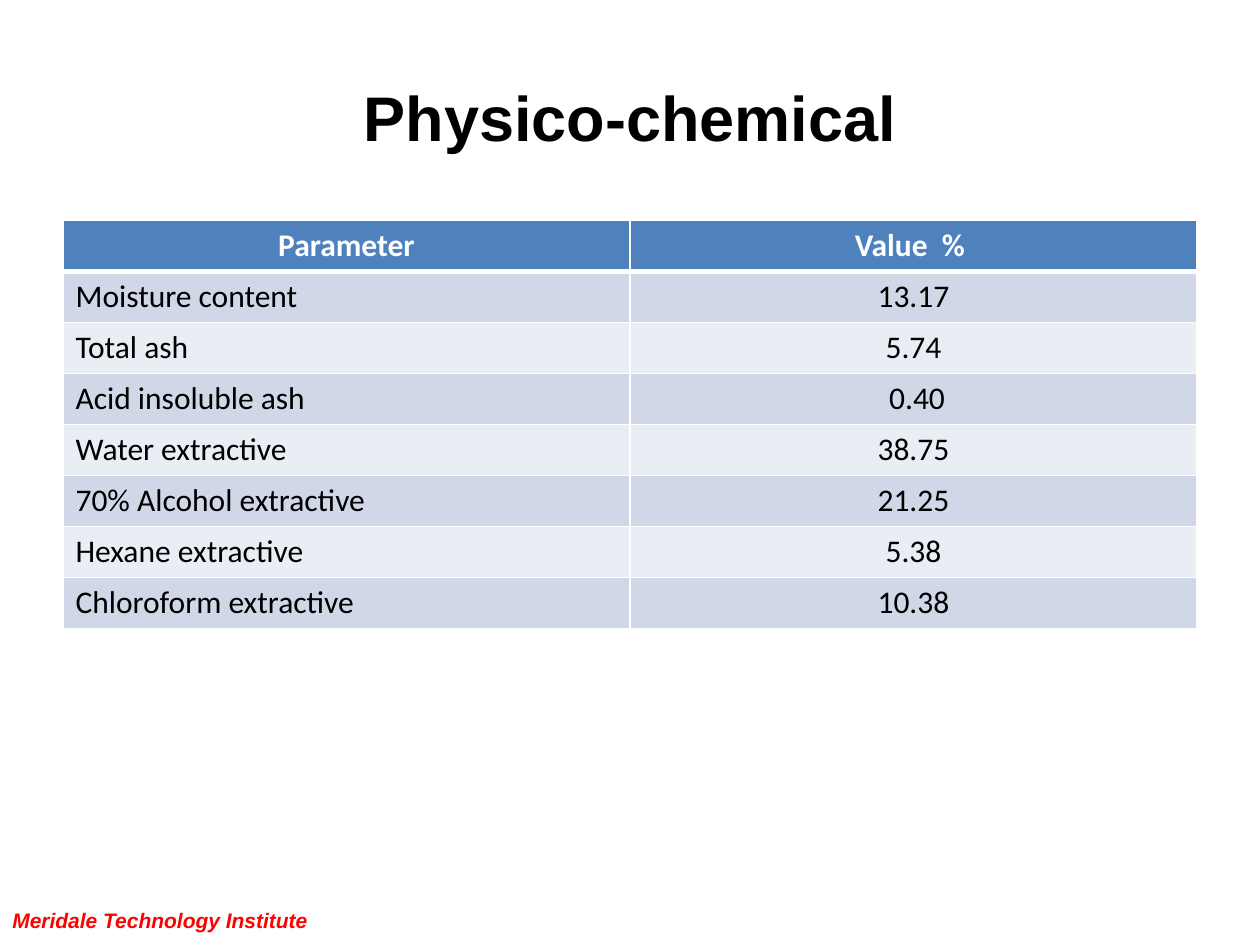
from lxml import etree
from pptx import Presentation
from pptx.dml.color import RGBColor
from pptx.enum.text import MSO_ANCHOR, PP_ALIGN
from pptx.oxml.ns import qn
from pptx.util import Inches, Pt

LEFT, CENTER = PP_ALIGN.LEFT, PP_ALIGN.CENTER
MIDDLE = MSO_ANCHOR.MIDDLE

COLORS = {
    "black": "000000",
    "white": "FFFFFF",
    "header": "4F81BD",
    "odd_row": "D0D8E8",
    "even_row": "E9EDF4",
    "footer": "FF0000",
}

ROWS = [
    ("Parameter", "Value  % "),
    ("Moisture content", "13.17"),
    ("Total ash", "5.74"),
    ("Acid insoluble ash", " 0.40"),
    ("Water extractive", "38.75"),
    ("70% Alcohol extractive", "21.25"),
    ("Hexane extractive", "5.38"),
    ("Chloroform extractive", "10.38"),
]


def write_text(text_frame, text, font_name, size, color, align, bold=False, italic=False):
    text_frame.text = text
    paragraph = text_frame.paragraphs[0]
    paragraph.alignment = align
    font = paragraph.runs[0].font
    font.name = font_name
    font.size = Pt(size)
    font.bold = bold
    font.italic = italic
    font.color.rgb = RGBColor.from_string(COLORS[color])


def add_label(slide, box, text, **style):
    """Add a vertically centred Arial text box."""
    text_frame = slide.shapes.add_textbox(*map(Inches, box)).text_frame
    text_frame.word_wrap = True
    text_frame.vertical_anchor = MIDDLE
    write_text(text_frame, text, "Arial", bold=True, **style)


def set_borders(cell, widths):
    """Draw white borders; widths maps L, R, T, B to points, in that order."""
    properties = cell._tc.get_or_add_tcPr()
    for index, (side, width) in enumerate(widths.items()):
        line = etree.Element(qn(f"a:ln{side}"), w=str(Pt(width)))
        fill = etree.SubElement(line, qn("a:solidFill"))
        etree.SubElement(fill, qn("a:srgbClr"), val=COLORS["white"])
        properties.insert(index, line)


def add_parameter_table(slide, box):
    table = slide.shapes.add_table(len(ROWS), len(ROWS[0]), *map(Inches, box)).table
    for row_index, row in enumerate(ROWS):
        is_header = row_index == 0
        row_color = "header" if is_header else "odd_row" if row_index % 2 else "even_row"
        widths = {
            "L": 1,
            "R": 1,
            "T": 3 if row_index == 1 else 1,
            "B": 3 if is_header else 1,
        }
        for column_index, text in enumerate(row):
            cell = table.cell(row_index, column_index)
            cell.fill.solid()
            cell.fill.fore_color.rgb = RGBColor.from_string(COLORS[row_color])
            set_borders(cell, widths)
            write_text(
                cell.text_frame, text, "Calibri", 18,
                "white" if is_header else "black",
                CENTER if is_header or column_index else LEFT,
                bold=is_header,
            )


def main():
    presentation = Presentation()
    presentation.slide_width = Inches(10)
    presentation.slide_height = Inches(7.5)
    slide = presentation.slides.add_slide(presentation.slide_layouts[6])
    add_label(slide, (0.5, 0.3, 9, 1.25), "Physico-chemical",
              size=36, color="black", align=CENTER)
    add_parameter_table(slide, (0.5, 1.75, 9, 3.24))
    add_label(slide, (0, 7.1, 2.67, 0.4), "Meridale Technology Institute",
              size=12, color="footer", align=LEFT, italic=True)
    presentation.save("out.pptx")


if __name__ == "__main__":
    main()
